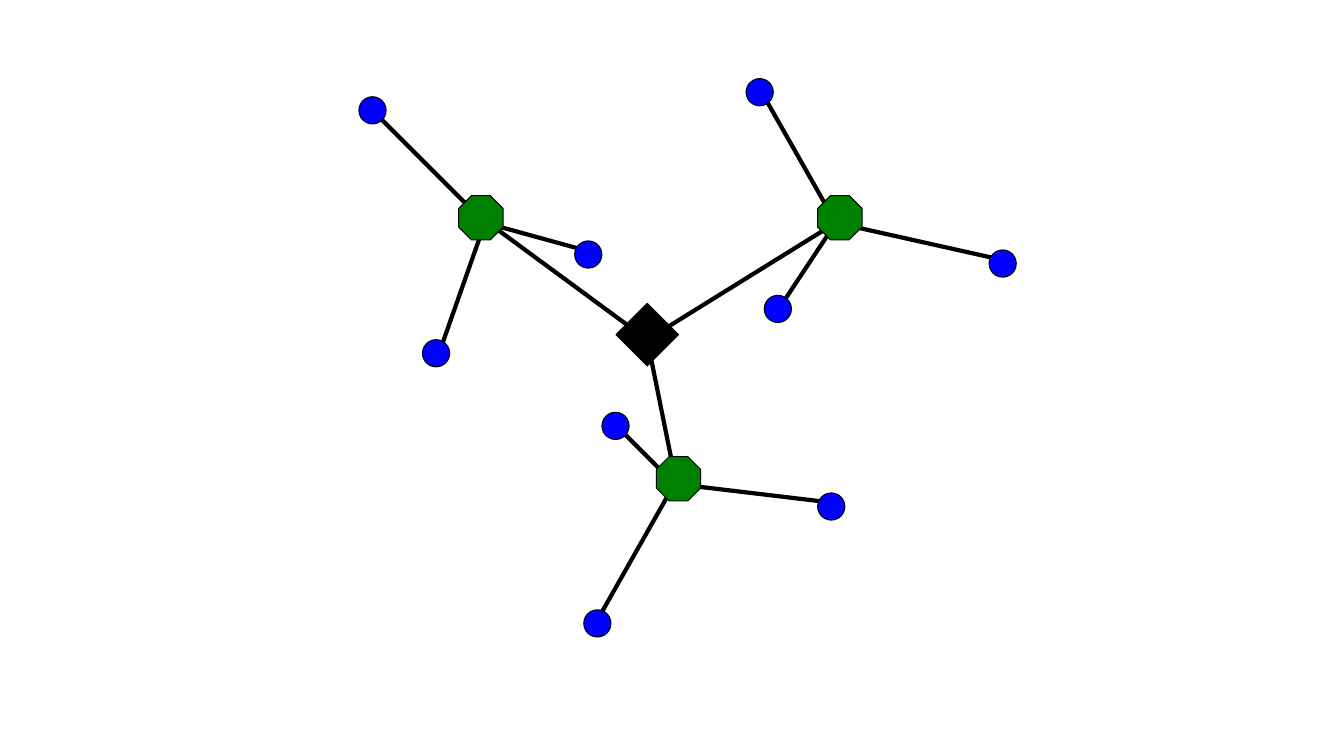
from collections import namedtuple

from lxml import etree
from pptx import Presentation
from pptx import util as u
from pptx.dml.color import RGBColor
from pptx.enum import shapes
from pptx.oxml import ns

PX = 9144
BLACK = RGBColor(0x00, 0x00, 0x00)
BLUE = RGBColor(0x00, 0x00, 0xFF)
GREEN = RGBColor(0x00, 0x80, 0x00)
LEAF_SIZE, HUB_SIZE, CORE_SIZE = 27, 44, 62

Box = namedtuple("Box", "left top")
Node = namedtuple("Node", "left top joint")
Hub = namedtuple("Hub", "node trunk leaves")

CORE = Node(255, 223, (31, 36))
HUBS = [
    Hub(Node(99, 116, (26, 27)), (17, 18),
        [Node(214, 161, (9, 9)), Node(0, 18, (18, 18)), Node(63, 259, (18, 9))]),
    Hub(Node(455, 116, (18, 27)), (18, 27),
        [Node(384, 0, (18, 18)), Node(625, 170, (9, 9)), Node(402, 215, (18, 8))]),
    Hub(Node(295, 375, (18, 27)), (18, 18),
        [Node(455, 411, (9, 9)), Node(223, 527, (9, 18)), Node(241, 331, (18, 17))]),
]


def joint_point(box, node, offset):
    """Return the slide position of an offset inside a node."""
    return box.left + node.left + offset[0], box.top + node.top + offset[1]


def add_link(group, start, end):
    """Draw one plain black link between two points."""
    link = group.shapes.add_connector(
        shapes.MSO_CONNECTOR.STRAIGHT, *(value * PX for value in start + end))
    link.line.color.rgb = BLACK
    link.line.width = u.Pt(3)
    etree.SubElement(link._element.spPr, ns.qn("a:effectLst"))


def add_node(page, box, node, kind, size, color):
    """Draw one outlined node and return its shape."""
    left, top = joint_point(box, node, (0, 0))
    shape = page.shapes.add_shape(kind, left * PX, top * PX, size * PX, size * PX)
    shape.shadow.inherit = False
    shape.fill.solid()
    shape.fill.fore_color.rgb = color
    shape.line.color.rgb = BLACK
    shape.line.width = u.Pt(0.75)
    return shape


def add_links(page, box):
    """Join the core to its hubs and each hub to its leaves."""
    group = page.shapes.add_group_shape()
    core_point = joint_point(box, CORE, CORE.joint)
    for hub in HUBS:
        add_link(group, core_point, joint_point(box, hub.node, hub.trunk))
    for hub in HUBS:
        hub_point = joint_point(box, hub.node, hub.node.joint)
        for leaf in hub.leaves:
            add_link(group, joint_point(box, leaf, leaf.joint), hub_point)


def add_network(page, box):
    """Draw the star network with its links behind its nodes."""
    add_links(page, box)
    kinds = shapes.MSO_SHAPE
    for hub in HUBS:
        for leaf in hub.leaves:
            add_node(page, box, leaf, kinds.FLOWCHART_CONNECTOR, LEAF_SIZE, BLUE)
    for hub in HUBS:
        octagon = add_node(page, box, hub.node, kinds.OCTAGON, HUB_SIZE, GREEN)
        octagon.adjustments[0] = 0.29
    add_node(page, box, CORE, kinds.DIAMOND, CORE_SIZE, BLACK)


def main():
    """Build and save the deck."""
    deck = Presentation()
    deck.slide_width, deck.slide_height = 1333 * PX, 750 * PX
    page = deck.slides.add_slide(deck.slide_layouts[6])
    add_network(page, Box(356, 78))
    deck.save("out.pptx")


if __name__ == "__main__":
    main()
